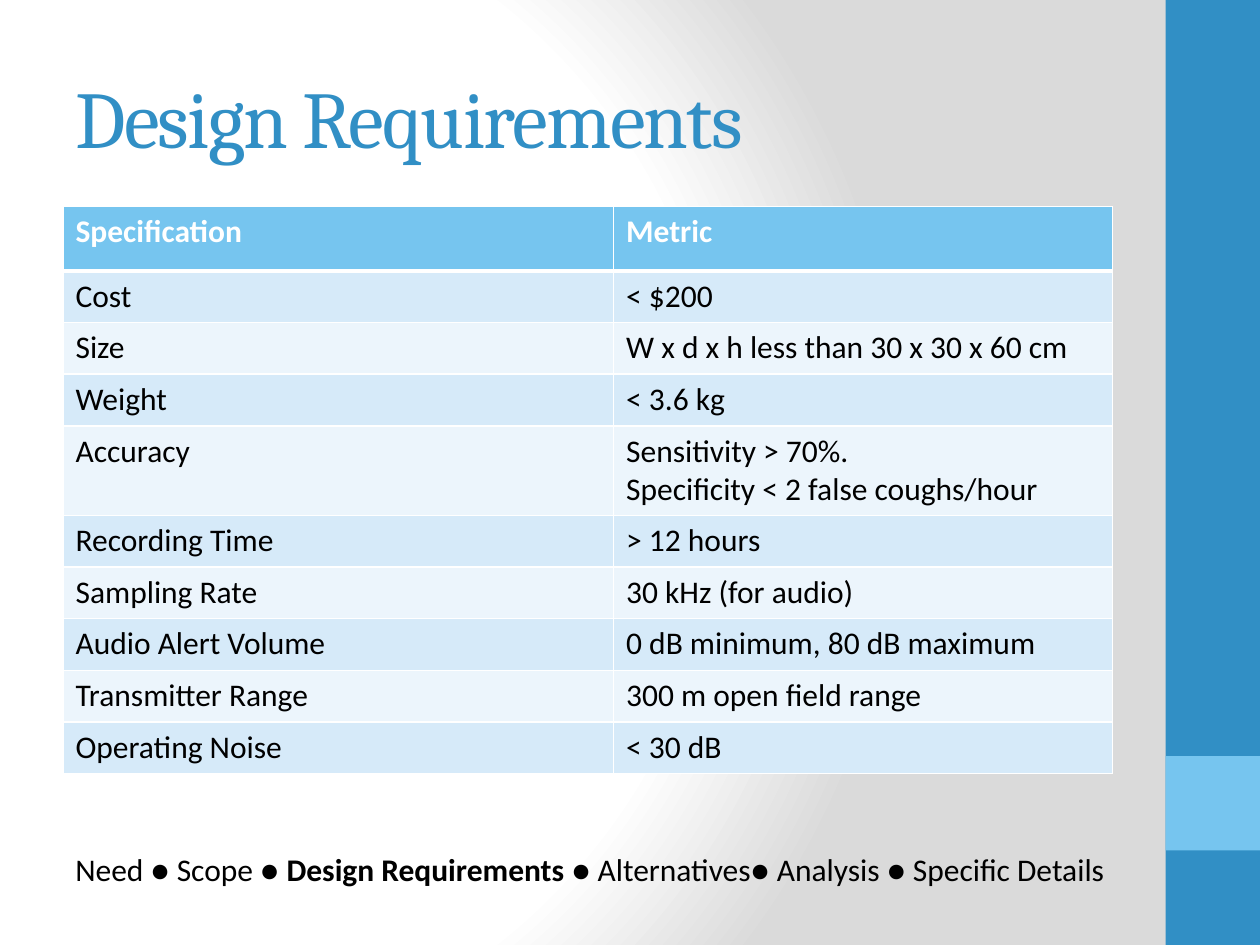
from lxml.etree import SubElement
from pptx import Presentation
from pptx.dml.color import RGBColor
from pptx.enum.shapes import MSO_SHAPE
from pptx.enum.text import MSO_ANCHOR, MSO_AUTO_SIZE, PP_ALIGN
from pptx.oxml import parse_xml
from pptx.oxml.ns import nsdecls, qn
from pptx.util import Inches, Pt

# Content
TITLE = "Design Requirements"
HEADER = ("Specification", "Metric")
REQUIREMENTS = [
    ("Cost", "< $200"),
    ("Size", "W x d x h less than 30 x 30 x 60 cm"),
    ("Weight", "< 3.6 kg"),
    ("Accuracy", "Sensitivity > 70%.\nSpecificity < 2 false coughs/hour"),
    ("Recording Time", "> 12 hours"),
    ("Sampling Rate", "30 kHz (for audio)"),
    ("Audio Alert Volume", "0 dB minimum, 80 dB maximum"),
    ("Transmitter Range", "300 m open field range"),
    ("Operating Noise", "< 30 dB"),
]
AGENDA = [  # text, bold
    ("Need ● Scope ● ", False),
    ("Design Requirements", True),
    (" ● Alternatives● Analysis ● Specific Details", False),
]

# Style
BLUE = RGBColor(0x31, 0x8F, 0xC5)
SKY = RGBColor(0x76, 0xC5, 0xEF)
BANDS = (RGBColor(0xD6, 0xEA, 0xF9), RGBColor(0xEC, 0xF5, 0xFC))
WHITE = RGBColor(0xFF, 0xFF, 0xFF)
BLACK = RGBColor(0, 0, 0)
GRADIENT_STOPS = ((0, "FFFFFF"), (75, "FFFFFF"), (100, "DADADA"))

# Layout, in inches
LEFT, CONTENT_WIDTH = 0.5, 8.33
COLUMN_WIDTHS = (4.37, 3.96)
HEADER_HEIGHT, ROW_HEIGHT = 0.51, 0.41
SIDEBAR_LEFT, SIDEBAR_WIDTH = 9.25, 0.75


def box(left, top, width, height):
    return [Inches(length) for length in (left, top, width, height)]


def add_run(paragraph, text, color, bold=False, size=18, font="Calibri"):
    run = paragraph.add_run()
    run.text = text
    run.font.name, run.font.size, run.font.bold = font, Pt(size), bold
    run.font.color.rgb = color
    return run


def set_background(slide):
    stops = "".join(f'<a:gs pos="{pos * 1000}"><a:srgbClr val="{color}"/></a:gs>'
                    for pos, color in GRADIENT_STOPS)
    slide.element.cSld.insert(0, parse_xml(
        f'<p:bg {nsdecls("p", "a")}><p:bgPr><a:gradFill rotWithShape="1">'
        f'<a:gsLst>{stops}</a:gsLst><a:path path="circle">'
        '<a:fillToRect l="20000" t="50000" r="100000" b="50000"/></a:path>'
        '</a:gradFill><a:effectLst/></p:bgPr></p:bg>'))


def add_block(slide, top, height, color):
    block = slide.shapes.add_shape(
        MSO_SHAPE.RECTANGLE, *box(SIDEBAR_LEFT, top, SIDEBAR_WIDTH, height))
    block.shadow.inherit = False
    block.fill.solid()
    block.fill.fore_color.rgb = color
    block.line.fill.background()


def set_borders(cell, top, bottom):
    properties = cell._tc.get_or_add_tcPr()
    widths = {"lnL": 1, "lnR": 1, "lnT": top, "lnB": bottom}
    for index, (side, width) in enumerate(widths.items()):
        line = parse_xml(
            f'<a:{side} {nsdecls("a")} w="{Pt(width)}"><a:solidFill>'
            f'<a:srgbClr val="{WHITE}"/></a:solidFill></a:{side}>')
        properties.insert(index, line)


def fill_cell(cell, text, row):
    is_header = row == 0
    for index, line in enumerate(text.split("\n")):
        frame = cell.text_frame
        paragraph = frame.add_paragraph() if index else frame.paragraphs[0]
        add_run(paragraph, line, WHITE if is_header else BLACK, is_header)
    cell.fill.solid()
    cell.fill.fore_color.rgb = SKY if is_header else BANDS[(row - 1) % 2]
    set_borders(cell, top=3 if row == 1 else 1, bottom=3 if is_header else 1)


def add_requirements(slide):
    rows = [HEADER, *REQUIREMENTS]
    height = HEADER_HEIGHT + ROW_HEIGHT * len(REQUIREMENTS)
    table = slide.shapes.add_table(
        len(rows), len(HEADER), *box(LEFT, 1.64, CONTENT_WIDTH, height)).table
    for column, width in zip(table.columns, COLUMN_WIDTHS):
        column.width = Inches(width)
    for row, texts in enumerate(rows):
        table.rows[row].height = Inches(ROW_HEIGHT if row else HEADER_HEIGHT)
        for column, text in enumerate(texts):
            fill_cell(table.cell(row, column), text, row)


def main():
    deck = Presentation()
    deck.slide_width, deck.slide_height = Inches(10), Inches(7.5)
    slide = deck.slides.add_slide(deck.slide_layouts[5])
    set_background(slide)

    # Sidebar
    add_block(slide, 0, 7.5, BLUE)
    add_block(slide, 6, 0.75, SKY)

    # Title
    title = slide.shapes.title
    title.left, title.top, title.width, title.height = box(
        LEFT, 0.3, CONTENT_WIDTH, 1.25)
    title.text_frame.vertical_anchor = MSO_ANCHOR.MIDDLE
    title.text_frame.auto_size = MSO_AUTO_SIZE.NONE
    heading = title.text_frame.paragraphs[0]
    heading.alignment = PP_ALIGN.LEFT
    run = add_run(heading, TITLE, BLUE, size=46, font="Cambria")
    run.font._element.set("spc", "-100")

    add_requirements(slide)

    # Agenda line
    agenda = slide.shapes.add_textbox(*box(LEFT, 6.7, 8.75, 0.4)).text_frame
    agenda.word_wrap = True
    agenda.auto_size = MSO_AUTO_SIZE.SHAPE_TO_FIT_TEXT
    for text, bold in AGENDA:
        add_run(agenda.paragraphs[0], text, BLACK, bold)

    deck.save("out.pptx")


if __name__ == "__main__":
    main()
